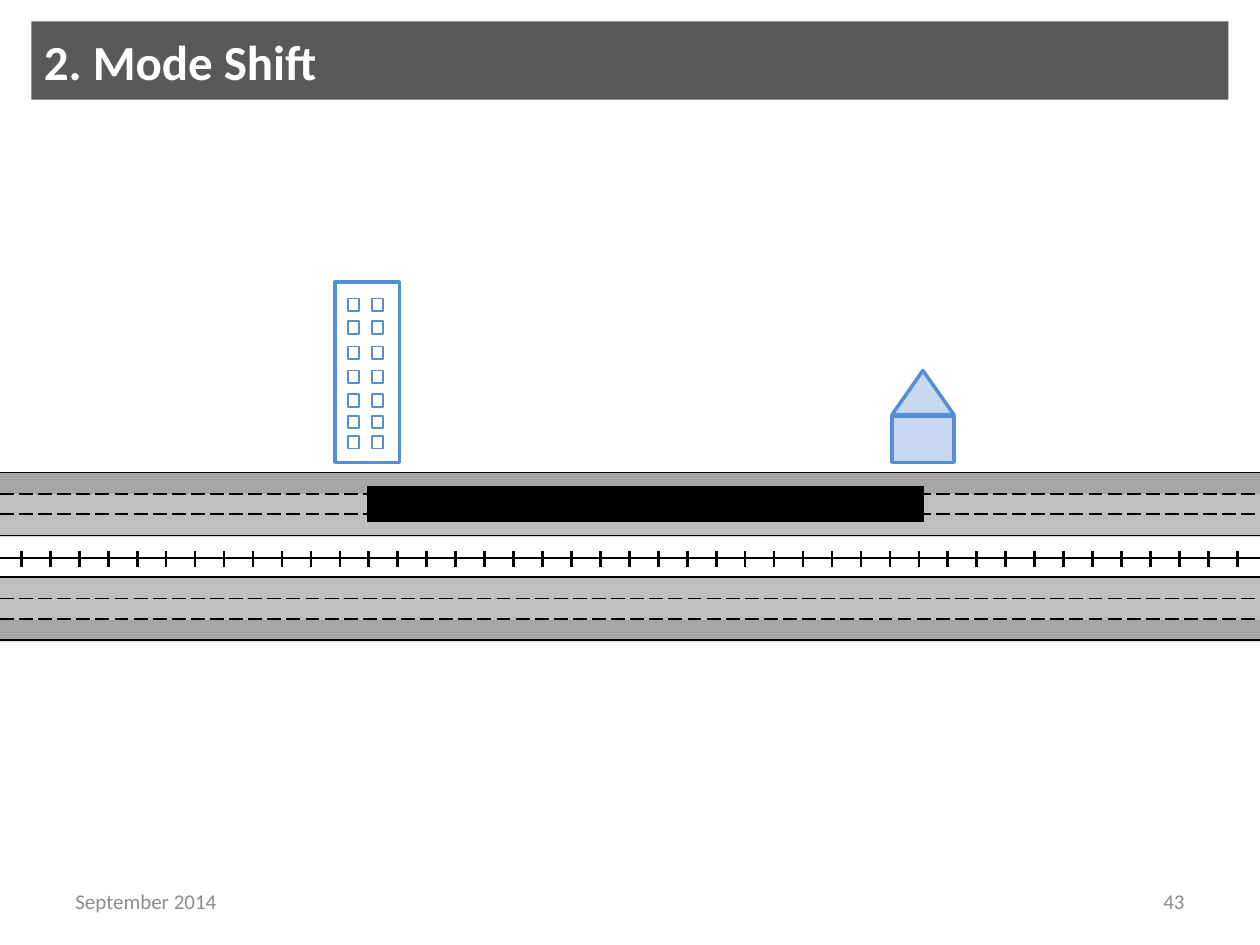
import pptx
import pptx.util
import pptx.dml.color
import pptx.enum.dml
import pptx.enum.shapes
import pptx.enum.text
import pptx.oxml.ns
import lxml.etree

Inches = pptx.util.Inches
SHAPES = pptx.enum.shapes.MSO_SHAPE
ALIGN = pptx.enum.text.PP_ALIGN
LONG_DASH = pptx.enum.dml.MSO_LINE.LONG_DASH

COLORS = {
    "black": "000000",
    "white": "FFFFFF",
    "banner": "595959",
    "footer": "8C8C8C",
    "outer_lane": "A6A6A6",
    "inner_lane": "BFBFBF",
    "outline": "558ED5",
    "house": "C6D9F1",
}
SLIDE_WIDTH = 10
LANE_HEIGHT = 0.17


def rgb(name):
    return pptx.dml.color.RGBColor.from_string(COLORS[name])


def add_block(shapes, left, top, width, height, fill=None, outline=None,
              weight=2, kind=SHAPES.RECTANGLE):
    shape = shapes.add_shape(kind, Inches(left), Inches(top), Inches(width), Inches(height))
    shape.shadow.inherit = False
    if fill:
        shape.fill.solid()
        shape.fill.fore_color.rgb = rgb(fill)
    else:
        shape.fill.background()
    if outline:
        shape.line.color.rgb = rgb(outline)
        shape.line.width = pptx.util.Pt(weight)
    else:
        shape.line.fill.background()
    return shape


def add_line(shapes, start, end, weight=1, dash=None):
    connector = shapes.add_connector(
        pptx.enum.shapes.MSO_CONNECTOR.STRAIGHT,
        *(Inches(value) for value in (*start, *end)))
    connector.line.color.rgb = rgb("black")
    connector.line.width = pptx.util.Pt(weight)
    if dash:
        connector.line.dash_style = dash
    properties = connector._element.spPr
    lxml.etree.SubElement(properties, pptx.oxml.ns.qn("a:effectLst"))


def write_text(shape, text, size=12, color="footer", bold=False, align=ALIGN.LEFT):
    frame = shape.text_frame
    frame.word_wrap = True
    frame.vertical_anchor = pptx.enum.text.MSO_ANCHOR.MIDDLE
    paragraph = frame.paragraphs[0]
    paragraph.text = text
    paragraph.alignment = align
    font = paragraph.font
    font.name = "Calibri"
    font.size = pptx.util.Pt(size)
    font.bold = bold
    font.color.rgb = rgb(color)


def add_footer(shapes, left, text, align):
    box = shapes.add_textbox(Inches(left), Inches(6.95), Inches(2.33), Inches(0.4))
    write_text(box, text, align=align)


def add_tower(shapes):
    tower = shapes.add_group_shape().shapes
    add_block(tower, 2.66, 2.24, 0.51, 1.43, outline="outline")
    for top in (2.37, 2.55, 2.75, 2.94, 3.13, 3.3, 3.46):
        for left in (2.76, 2.95):
            add_block(tower, left, top, 0.09, 0.1, outline="outline", weight=1)


def add_house(shapes):
    house = shapes.add_group_shape().shapes
    add_block(house, 7.08, 3.3, 0.49, 0.37, fill="house", outline="outline")
    add_block(house, 7.08, 2.94, 0.49, 0.35, fill="house", outline="outline",
              kind=SHAPES.ISOSCELES_TRIANGLE)


def add_railway(shapes):
    railway = shapes.add_group_shape().shapes
    add_line(railway, (0, 4.43), (SLIDE_WIDTH, 4.43), weight=1.5)
    first, last, count = 0.17, 9.82, 43
    for index in range(count):
        x = first + index * (last - first) / (count - 1)
        add_line(railway, (x, 4.5), (x, 4.37), weight=1.5)


def add_road(shapes, top, outer_top, inner_top):
    add_block(shapes, 0, outer_top, SLIDE_WIDTH, LANE_HEIGHT, fill="outer_lane")
    add_block(shapes, 0, inner_top, SLIDE_WIDTH, 2 * LANE_HEIGHT, fill="inner_lane")
    for offset, dash in ((0, None), (0.17, LONG_DASH), (0.33, LONG_DASH), (0.5, None)):
        add_line(shapes, (0, top + offset), (SLIDE_WIDTH, top + offset), dash=dash)


def main():
    presentation = pptx.Presentation()
    presentation.slide_width = Inches(SLIDE_WIDTH)
    presentation.slide_height = Inches(7.5)
    slide = presentation.slides.add_slide(presentation.slide_layouts[6])
    shapes = slide.shapes

    banner = add_block(shapes, 0.25, 0.17, 9.5, 0.62, fill="banner")
    write_text(banner, "2. Mode Shift", size=28, color="white", bold=True)
    add_tower(shapes)
    add_railway(shapes)
    add_road(shapes, 3.75, outer_top=3.75, inner_top=3.92)
    add_road(shapes, 4.58, outer_top=4.92, inner_top=4.58)
    add_line(shapes, (2.91, 4), (7.33, 4), weight=20.25)
    add_house(shapes)
    add_footer(shapes, 0.5, "September 2014", ALIGN.LEFT)
    add_footer(shapes, 7.17, "43", ALIGN.RIGHT)
    presentation.save("out.pptx")


if __name__ == "__main__":
    main()
